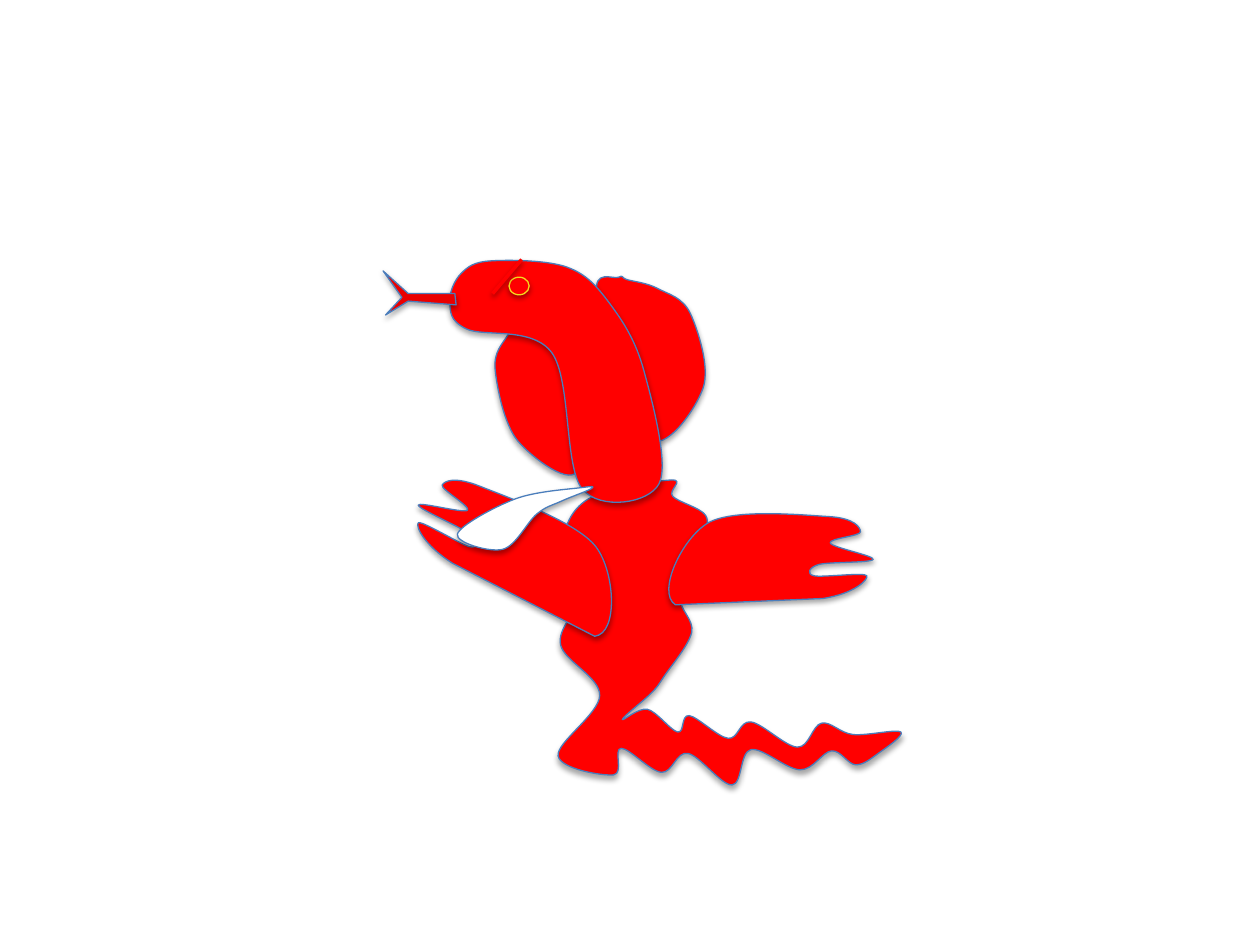
from lxml import etree
from pptx import Presentation
from pptx import util as u
from pptx.dml.color import RGBColor
from pptx.enum import shapes
from pptx.oxml import ns

RED, BLUE, WHITE, GOLD, TONGUE = "FF0000", "4B7EBC", "FFFFFF", "F6D91D", "EA0000"

LEFT_SIDE = [(4.67, 3.96), (4.46, 4.33), (4.58, 4.74), (4.45, 5.12), (4.76, 5.52)]
FOOT = [(4.43, 6), (4.87, 6.15)]
TAIL_UNDER = [(4.93, 5.94), (5.25, 6.13), (5.46, 5.98), (5.81, 6.23), (5.96, 5.95),
              (6.35, 6.11), (6.6, 5.96), (6.79, 6.07), (6.97, 5.98)]
TAIL_TIP = [(7.15, 5.81)]
TAIL_OVER = [(6.77, 5.83), (6.52, 5.74), (6.33, 5.93), (5.96, 5.73), (5.78, 5.86),
             (5.47, 5.68), (5.38, 5.81), (5.14, 5.63), (4.94, 5.71)]
RIGHT_SIDE = [(5.17, 5.5), (5.27, 5.37), (5.49, 5.02), (5.41, 4.76),
              (5.67, 4.64), (5.59, 4.31), (5.6, 4.09)]
NECK = [(5.34, 3.94), (5.33, 3.81)]
BODY = LEFT_SIDE + FOOT + TAIL_UNDER + TAIL_TIP + TAIL_OVER + RIGHT_SIDE + NECK

LEFT_HOOD = [(4.39, 2.55), (4.22, 2.48), (4.17, 2.52), (4.03, 2.66),
             (3.93, 2.93), (4.11, 3.5), (4.59, 3.72)]
RIGHT_HOOD = [(4.74, 2.34), (4.91, 2.2), (4.98, 2.22), (5.22, 2.29),
              (5.48, 2.49), (5.58, 3.08), (5.14, 3.48)]

NAPE = [(5.23, 3.84), (5.11, 2.94), (4.84, 2.41), (4.5, 2.12)]
SNOUT = [(3.9, 2.07), (3.66, 2.17), (3.57, 2.4), (3.7, 2.61)]
THROAT = [(4.38, 2.8), (4.62, 3.88)]
HEAD = NAPE + SNOUT + THROAT

FORK = [(3.61, 2.33), (3.24, 2.33), (3.04, 2.15), (3.19, 2.36),
        (3.06, 2.5), (3.24, 2.39), (3.62, 2.42)]

LEFT_CLAWS = [(3.51, 3.85), (3.71, 4.05), (3.32, 4.01), (3.73, 4.24),
              (3.73, 4.34), (3.32, 4.15)]
LEFT_ARM = [(4.73, 4.34), (3.81, 3.86)] + LEFT_CLAWS + [(3.59, 4.47), (4.72, 5.05)]
RIGHT_CLAWS = [(6.83, 4.22), (6.59, 4.31), (6.93, 4.44), (6.5, 4.48),
               (6.46, 4.57), (6.88, 4.57)]
RIGHT_ARM = [(5.62, 4.15), (6.58, 4.1)] + RIGHT_CLAWS + [(6.53, 4.75), (5.36, 4.8)]

BLADE = [(3.63, 4.24), (4.09, 3.96), (4.62, 3.87), (4.69, 3.88),
         (4.45, 3.98), (4.26, 4.08), (3.99, 4.36)]


def tint(code):
    return RGBColor.from_string(code)


def inch(*nums):
    return [u.Inches(n) for n in nums]


def smooth(dots, flat=()):
    """Join dots in a closed ring of splines; edges listed in flat stay straight.

    The slope at each dot is one sixth of the way from the dot before to the dot after.
    """
    count = len(dots)
    slopes = []
    for i in range(count):
        (ax, ay), (bx, by) = dots[i - 1], dots[(i + 1) % count]
        slopes.append(((bx - ax) / 6, (by - ay) / 6))
    edges = []
    for i, (x, y) in enumerate(dots):
        j = (i + 1) % count
        end, (dx, dy), (ex, ey) = dots[j], slopes[i], slopes[j]
        knobs = [(x + dx, y + dy), (end[0] - ex, end[1] - ey)]
        edges.append([end] if i in flat else knobs + [end])
    return edges


class Pen:
    def __init__(self, slide, line=BLUE, width=0.75):
        self.group = slide.shapes.add_group_shape().shapes
        self.line, self.width = line, width

    def shade(self, shape, alpha=35, drop=1.8):
        props = shape.element.find(ns.qn("p:spPr"))
        effect = etree.SubElement(props, ns.qn("a:effectLst"))
        cast = etree.SubElement(
            effect, ns.qn("a:outerShdw"), blurRad=str(u.Pt(3.1)),
            dist=str(u.Pt(drop)), dir="5400000", rotWithShape="0")
        hue = etree.SubElement(cast, ns.qn("a:srgbClr"), val="000000")
        etree.SubElement(hue, ns.qn("a:alpha"), val=str(alpha * 1000))

    def paint(self, shape, fill, line):
        shape.fill.solid()
        shape.fill.fore_color.rgb = tint(fill)
        shape.line.color.rgb = tint(line)
        shape.line.width = u.Pt(self.width)
        self.shade(shape)

    def form(self, dots, fill=RED, flat=()):
        edges = smooth(dots, flat)
        build = self.group.build_freeform(*inch(*dots[0]))
        build.add_line_segments([inch(*dot) for edge in edges for dot in edge])
        shape = build.convert_to_shape()
        steps = iter(list(shape.element.iter(ns.qn("a:lnTo"))))
        for edge in edges:
            moves = [next(steps) for _ in edge]
            if len(moves) == 3:
                bend = etree.Element(ns.qn("a:cubicBezTo"))
                moves[0].addprevious(bend)
                for move in moves:
                    bend.append(move[0])
                    move.getparent().remove(move)
        self.paint(shape, fill, self.line)

    def oval(self, left, top, width, height, fill, line):
        box = inch(left, top, width, height)
        shape = self.group.add_shape(shapes.MSO_SHAPE.OVAL, *box)
        self.paint(shape, fill, line)

    def stroke(self, begin, end, line, width):
        link = self.group.add_connector(
            shapes.MSO_CONNECTOR.STRAIGHT, *inch(*begin), *inch(*end))
        link.line.color.rgb = tint(line)
        link.line.width = u.Pt(width)
        self.shade(link, alpha=38, drop=1.6)


def main():
    deck = Presentation()
    deck.slide_width, deck.slide_height = inch(10, 7.5)
    pen = Pen(deck.slides.add_slide(deck.slide_layouts[6]))
    for part in (BODY, LEFT_HOOD, RIGHT_HOOD, HEAD):
        pen.form(part)
    pen.oval(4.04, 2.2, 0.16, 0.14, RED, GOLD)
    pen.stroke((4.14, 2.06), (3.91, 2.33), RED, 2)
    pen.form(FORK, TONGUE, flat=range(len(FORK)))
    for arm in (LEFT_ARM, RIGHT_ARM):
        pen.form(arm, flat=[len(arm) - 2])
    pen.form(BLADE, WHITE)
    deck.save("out.pptx")


if __name__ == "__main__":
    main()
